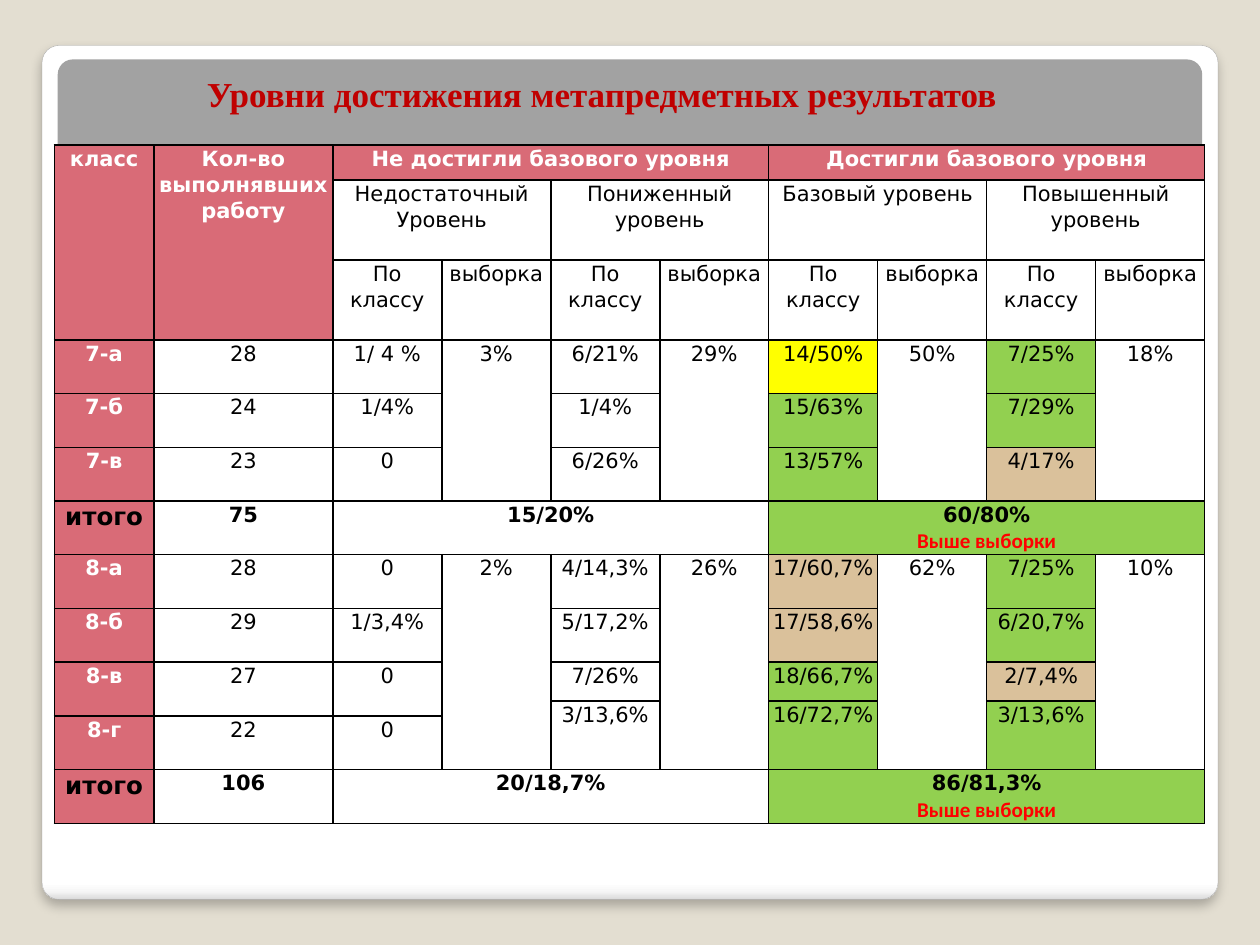
from dataclasses import dataclass

from lxml import etree
from pptx import Presentation
from pptx.dml.color import RGBColor
from pptx.enum.shapes import MSO_SHAPE
from pptx.enum.text import MSO_ANCHOR, PP_ALIGN
from pptx.oxml import parse_xml
from pptx.oxml.ns import nsdecls, qn
from pptx.util import Pt

ROUND_RECT = MSO_SHAPE.ROUNDED_RECTANGLE
CENTER, JUSTIFY = PP_ALIGN.CENTER, PP_ALIGN.JUSTIFY
MIDDLE = MSO_ANCHOR.MIDDLE

COLORS = {
    "background": "E3DED1", "edge": "A4A4A4", "band": "A2A2A2",
    "title": "C00000", "head": "D96B77", "white": "FFFFFF",
    "black": "000000", "red": "FF0000", "yellow": "FFFF00",
    "green": "92D050", "tan": "DAC19B",
}
PANEL_STOPS = [(0, "FFFFFF"), (98, "FFFFFF"), (99, "F7F7F7"), (100, "DADADA")]
COL_WIDTHS = [57, 102.2] + [62.3] * 8
ROW_HEIGHTS = [20, 45.7, 45.7] + [30.7] * 6 + [22.2, 8.5, 30.7, 30.7]


@dataclass
class Cell:
    row: int
    col: int
    text: str
    fill: str = "white"
    rows: int = 1
    cols: int = 1
    color: str = "black"
    bold: bool = False
    size: float = 12


@dataclass
class SchoolClass:
    name: str
    count: str
    results: list[str]
    fills: tuple[str, str]
    row: int
    rows: int = 1
    result_row: int | None = None
    result_rows: int = 1


@dataclass
class Grade:
    classes: list[SchoolClass]
    sample: list[str]
    sample_rows: int
    total_row: int
    total: str
    below: str
    reached: str


GRADES = [
    Grade([
        SchoolClass("7-а", "28", ["1/ 4 %", "6/21%", "14/50%", "7/25%"], ("yellow", "green"), 3),
        SchoolClass("7-б", "24", ["1/4%", "1/4%", "15/63%", "7/29%"], ("green", "green"), 4),
        SchoolClass("7-в", "23", ["0", "6/26%", "13/57%", "4/17%"], ("green", "tan"), 5),
    ], ["3%", "29%", "50%", "18%"], 3, 6, "75", "15/20%", "60/80%"),
    Grade([
        SchoolClass("8-а", "28", ["0", "4/14,3%", "17/60,7%", "7/25%"], ("tan", "green"), 7),
        SchoolClass("8-б", "29", ["1/3,4%", "5/17,2%", "17/58,6%", "6/20,7%"], ("tan", "green"), 8),
        SchoolClass("8-в", "27", ["0", "7/26%", "18/66,7%", "2/7,4%"], ("green", "tan"), 9, rows=2),
        SchoolClass("8-г", "22", ["0", "3/13,6%", "16/72,7%", "3/13,6%"], ("green", "green"), 11,
                    result_row=10, result_rows=2),
    ], ["2%", "26%", "62%", "10%"], 5, 12, "106", "20/18,7%", "86/81,3%"),
]


def rgb(name: str) -> RGBColor:
    return RGBColor.from_string(COLORS[name])


def head_cell(row: int, col: int, text: str, rows: int = 1, cols: int = 1) -> Cell:
    return Cell(row, col, text, "head", rows, cols, "white", True)


def header_cells() -> list[Cell]:
    cells = [
        head_cell(0, 0, "класс", rows=3),
        head_cell(0, 1, "Кол-во выполнявших работу", rows=3),
        head_cell(0, 2, "Не достигли базового уровня", cols=4),
        head_cell(0, 6, "Достигли базового уровня", cols=4),
    ]
    levels = ["Недостаточный\nУровень", "Пониженный уровень", "Базовый уровень", "Повышенный уровень"]
    for col, level in zip(range(2, 10, 2), levels):
        cells += [Cell(1, col, level, cols=2), Cell(2, col, "По классу"), Cell(2, col + 1, "выборка")]
    return cells


def grade_cells(grade: Grade) -> list[Cell]:
    cells = []
    for c in grade.classes:
        cells += [head_cell(c.row, 0, c.name, c.rows),
                  Cell(c.row, 1, c.count, rows=c.rows),
                  Cell(c.row, 2, c.results[0], rows=c.rows)]
        fills = ("white", *c.fills)
        for col, text, fill in zip((4, 6, 8), c.results[1:], fills):
            cells.append(Cell(c.result_row or c.row, col, text, fill, c.result_rows))
    for col, text in zip(range(3, 10, 2), grade.sample):
        cells.append(Cell(grade.classes[0].row, col, text, rows=grade.sample_rows))
    row = grade.total_row
    return cells + [
        Cell(row, 0, "итого", "head", bold=True, size=14),
        Cell(row, 1, grade.total, bold=True),
        Cell(row, 2, grade.below, cols=4, bold=True),
        Cell(row, 6, f"{grade.reached}\nВыше выборки", "green", cols=4, bold=True),
    ]


def add_panel(s, left: float, top: float, width: float, height: float, fill: str):
    sp = s.shapes.add_shape(ROUND_RECT, Pt(left), Pt(top), Pt(width), Pt(height))
    sp.adjustments[0] = 0.02
    sp.shadow.inherit = False
    sp.fill.solid()
    sp.fill.fore_color.rgb = rgb(fill)
    sp.line.fill.background()
    return sp


def shade_panel(sp) -> None:
    """Give the panel its gradient, thin edge and soft shadow below."""
    sp.line.color.rgb = rgb("edge")
    sp.line.width = Pt(0.16)
    stops = "".join(f'<a:gs pos="{pos * 1000}"><a:srgbClr val="{color}"/></a:gs>'
                    for pos, color in PANEL_STOPS)
    props = sp.element.spPr
    props.replace(props.find(qn("a:solidFill")), parse_xml(
        f'<a:gradFill {nsdecls("a")}><a:gsLst>{stops}</a:gsLst><a:lin ang="5400000"/></a:gradFill>'))
    shadow = etree.SubElement(props.find(qn("a:effectLst")), qn("a:outerShdw"),
                              blurRad=str(Pt(6)), dist=str(Pt(4)), dir="5400000")
    color = etree.SubElement(shadow, qn("a:srgbClr"), val=COLORS["black"])
    etree.SubElement(color, qn("a:alpha"), val="25000")


def set_borders(cell) -> None:
    props = cell._tc.get_or_add_tcPr()
    for i, side in enumerate("LRTB"):
        props.insert(i, parse_xml(
            f'<a:ln{side} {nsdecls("a")} w="{Pt(1)}"><a:solidFill>'
            f'<a:srgbClr val="{COLORS["black"]}"/></a:solidFill></a:ln{side}>'))


def format_run(r, font: str, size: float, color: str, bold: bool) -> None:
    r.font.name, r.font.size, r.font.bold = font, Pt(size), bold
    r.font.color.rgb = rgb(color)


def fill_cell(table, item: Cell) -> None:
    cell = table.cell(item.row, item.col)
    if item.rows * item.cols > 1:
        cell.merge(table.cell(item.row + item.rows - 1, item.col + item.cols - 1))
    cell.text_frame.text = item.text
    for p in cell.text_frame.paragraphs:
        p.alignment, p.line_spacing = CENTER, 1.07
        for r in p.runs:
            note = r.text == "Выше выборки"
            format_run(r, "Calibri" if note else "DejaVu Sans", item.size,
                       "red" if note else item.color, item.bold)
    for row in range(item.row, item.row + item.rows):
        for col in range(item.col, item.col + item.cols):
            part = table.cell(row, col)
            part.margin_left = part.margin_right = Pt(0.7)
            part.margin_top = part.margin_bottom = 0
            part.fill.solid()
            part.fill.fore_color.rgb = rgb(item.fill)
            set_borders(part)


def add_results_table(s) -> None:
    table = s.shapes.add_table(len(ROW_HEIGHTS), len(COL_WIDTHS), Pt(31), Pt(82.8),
                               Pt(sum(COL_WIDTHS)), Pt(sum(ROW_HEIGHTS))).table
    for column, width in zip(table.columns, COL_WIDTHS):
        column.width = Pt(width)
    for row, height in zip(table.rows, ROW_HEIGHTS):
        row.height = Pt(height)
    for item in header_cells() + [c for grade in GRADES for c in grade_cells(grade)]:
        fill_cell(table, item)


def place_title(s) -> None:
    title = s.shapes.title
    title.left, title.top, title.width, title.height = Pt(111), Pt(37.5), Pt(527), Pt(31.5)
    title.text_frame.text = "Уровни достижения метапредметных результатов"
    title.text_frame.vertical_anchor = MIDDLE
    p = title.text_frame.paragraphs[0]
    p.alignment = JUSTIFY
    format_run(p.runs[0], "Times New Roman", 20, "title", True)
    title.element.getparent().append(title.element)


def main() -> None:
    prs = Presentation()
    prs.slide_width, prs.slide_height = Pt(720), Pt(540)
    s = prs.slides.add_slide(prs.slide_layouts[5])
    s.background.fill.solid()
    s.background.fill.fore_color.rgb = rgb("background")
    shade_panel(add_panel(s, 24, 26, 672, 488, "white"))
    add_panel(s, 33, 34, 654, 432, "band")
    add_results_table(s)
    place_title(s)
    prs.save("out.pptx")


if __name__ == "__main__":
    main()
